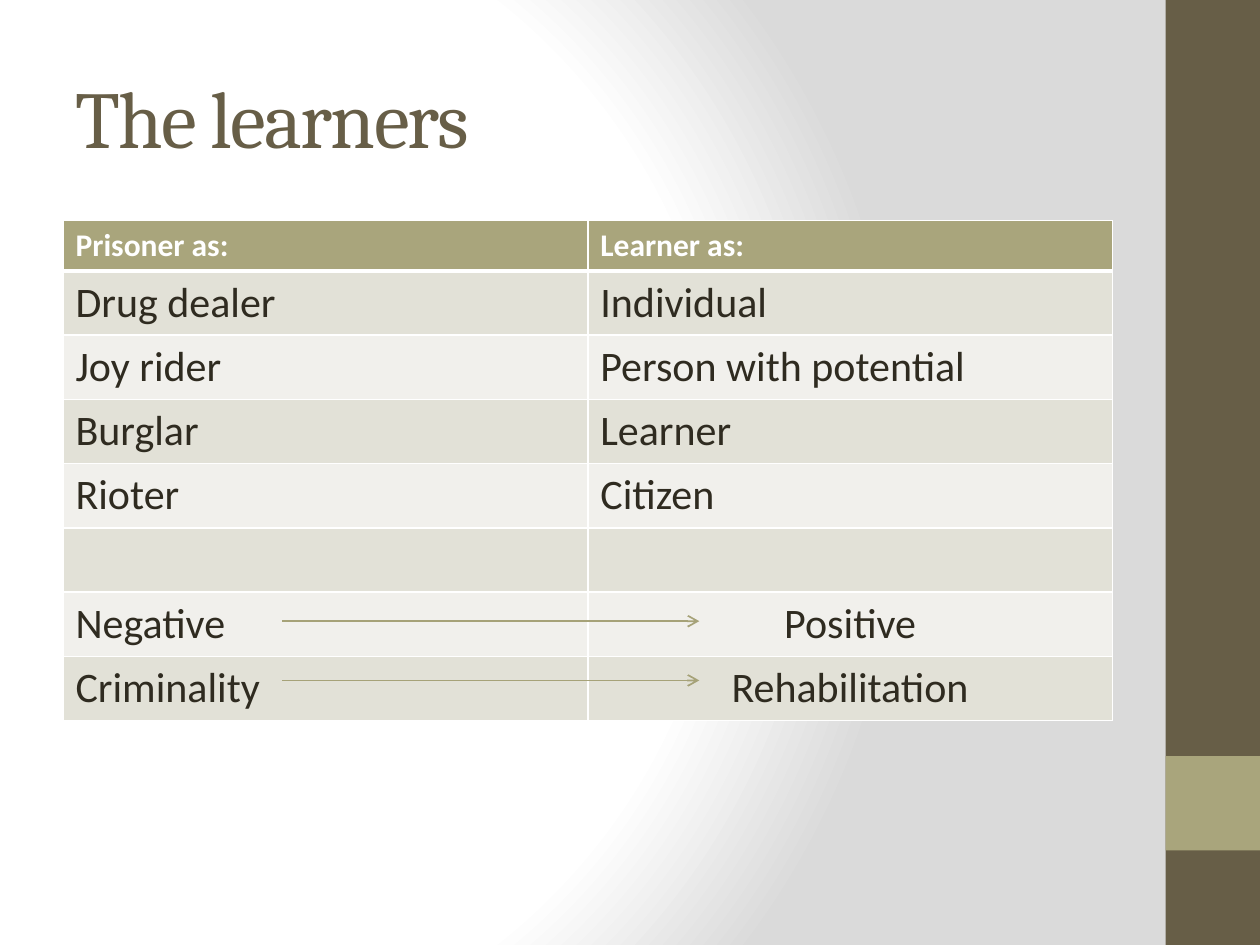
from lxml import etree
from pptx import Presentation
from pptx.dml.color import RGBColor
from pptx.enum.shapes import MSO_CONNECTOR as Line, MSO_SHAPE as Shape
from pptx.enum.text import MSO_ANCHOR as Anchor, PP_ALIGN as Align
from pptx.oxml import parse_xml
from pptx.oxml.ns import nsdecls, qn
from pptx.util import Inches, Pt

DARK, SAND, INK, WHITE = "675E47", "A9A57C", "2F2B20", "FFFFFF"
BANDS = ["E2E1D7", "F1F0EC"]


def color(code):
    return RGBColor.from_string(code)


class Deck:
    head, body = "Cambria", "Calibri"

    def __init__(self, wide, high):
        self.prs = Presentation()
        self.prs.slide_width = Inches(wide)
        self.prs.slide_height = Inches(high)
        self.slide = self.prs.slides.add_slide(self.prs.slide_layouts[6])
        self.shapes = self.slide.shapes

    def glow(self, stops, sides):
        self.slide.background.fill.gradient()
        old = next(self.slide.element.iter(qn("a:gradFill")))
        marks = "".join(
            f'<a:gs pos="{pos * 1000}"><a:srgbClr val="{code}"/></a:gs>'
            for pos, code in stops)
        rect = " ".join(f'{side}="{val * 1000}"' for side, val in sides.items())
        new = parse_xml(
            f'<a:gradFill {nsdecls("a")} rotWithShape="1"><a:gsLst>{marks}</a:gsLst>'
            f'<a:path path="circle"><a:fillToRect {rect}/></a:path></a:gradFill>')
        old.getparent().replace(old, new)

    def block(self, x, y, w, h, fill):
        box = self.shapes.add_shape(Shape.RECTANGLE, *map(Inches, (x, y, w, h)))
        box.shadow.inherit = False
        box.fill.solid()
        box.fill.fore_color.rgb = color(fill)
        box.line.fill.background()

    def label(self, frame, text, size, ink, font, bold=False, align=Align.LEFT):
        para = frame.paragraphs[0]
        para.alignment = align
        run = para.add_run()
        run.text = text
        run.font.size, run.font.bold, run.font.name = Pt(size), bold, font
        run.font.color.rgb = color(ink)
        return run

    def title(self, x, y, w, h, text):
        frame = self.shapes.add_textbox(*map(Inches, (x, y, w, h))).text_frame
        frame.word_wrap = True
        frame.vertical_anchor = Anchor.MIDDLE
        run = self.label(frame, text, 46, DARK, self.head)
        run.font._element.set("spc", "-100")

    def edges(self, cell, low):
        props = cell._tc.get_or_add_tcPr()
        for side in "LRTB":
            wide = Pt(low if side == "B" else 1)
            props.append(parse_xml(
                f'<a:ln{side} {nsdecls("a")} w="{wide}"><a:solidFill>'
                f'<a:srgbClr val="{WHITE}"/></a:solidFill></a:ln{side}>'))

    def table(self, x, y, w, rows, top, step):
        high = top + step * (len(rows) - 1)
        grid = self.shapes.add_table(
            len(rows), len(rows[0]), *map(Inches, (x, y, w, high))).table
        for i, row in enumerate(rows):
            first = i == 0
            grid.rows[i].height = Inches(top if first else step)
            for j, (text, align) in enumerate(row):
                cell = grid.cell(i, j)
                self.edges(cell, 3 if first else 1)
                cell.fill.solid()
                cell.fill.fore_color.rgb = color(SAND if first else BANDS[(i - 1) % 2])
                if text:
                    size, ink = (18, WHITE) if first else (24, INK)
                    self.label(cell.text_frame, text, size, ink, self.body, first, align)

    def arrow(self, x, y, end):
        line = self.shapes.add_connector(
            Line.STRAIGHT, *map(Inches, (x, y, end, y)))
        line.line.color.rgb = color("A6A278")
        line.line.width = Pt(1)
        etree.SubElement(line.line._get_or_add_ln(), qn("a:tailEnd"), type="arrow")
        etree.SubElement(line._element.spPr, qn("a:effectLst"))


def main():
    deck = Deck(10, 7.5)

    # Background and side bar
    deck.glow([(0, WHITE), (75, WHITE), (100, "DADADA")],
              {"l": 20, "t": 50, "r": 100, "b": 50})
    deck.block(9.25, 0, 0.75, 7.5, DARK)
    deck.block(9.25, 6, 0.75, 0.75, SAND)

    # Title
    deck.title(0.5, 0.3, 8.33, 1.25, "The learners")

    # Table of views
    pairs = [
        ("Prisoner as:", "Learner as:"),
        ("Drug dealer", "Individual"),
        ("Joy rider", "Person with potential"),
        ("Burglar", "Learner"),
        ("Rioter", "Citizen"),
        ("", ""),
    ]
    shifts = [("Negative", "Positive"), ("Criminality", "Rehabilitation")]
    rows = [[(a, Align.LEFT), (b, Align.LEFT)] for a, b in pairs]
    rows += [[(a, Align.LEFT), (b, Align.CENTER)] for a, b in shifts]
    deck.table(0.5, 1.75, 8.33, rows, 0.4, 0.51)

    # Arrows from old view to new
    for y in (4.93, 5.4):
        deck.arrow(2.24, y, 5.55)

    deck.prs.save("out.pptx")


if __name__ == "__main__":
    main()
